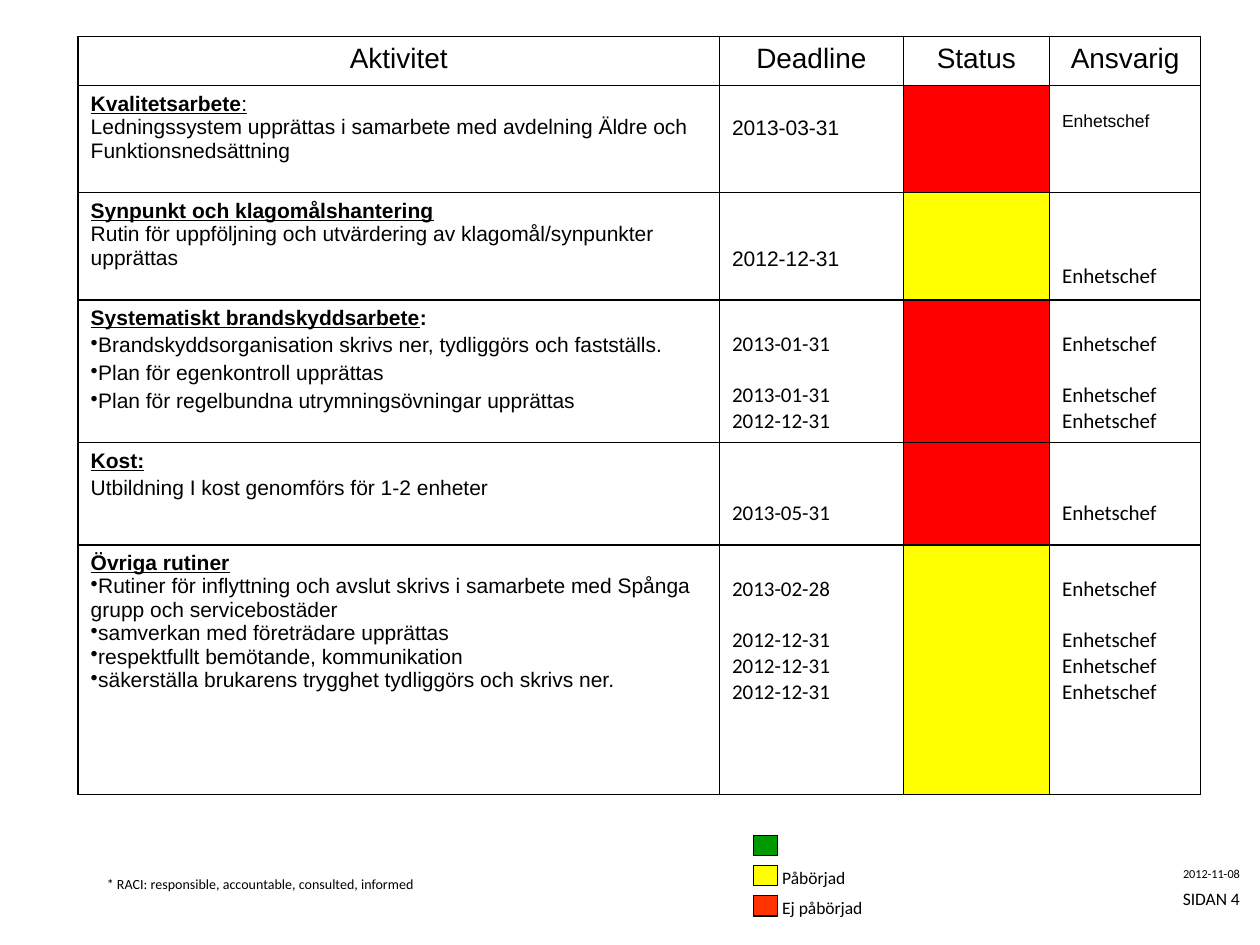
from dataclasses import dataclass

from lxml.etree import SubElement
from pptx import Presentation
from pptx.dml.color import RGBColor
from pptx.enum.shapes import MSO_SHAPE
from pptx.enum.text import MSO_ANCHOR, PP_ALIGN
from pptx.oxml.ns import qn
from pptx.util import Inches, Pt


@dataclass(frozen=True)
class Theme:
    black: str = "000000"
    white: str = "FFFFFF"
    red: str = "FF0000"
    yellow: str = "FFFF00"
    green: str = "009900"
    orange: str = "FF3300"
    heading_font: str = "Arial"
    detail_font: str = "Calibri"
    heading: int = 16
    body: int = 12
    small: int = 10
    note: int = 8
    stamp: int = 7


THEME = Theme()
ARIAL, CALIBRI = THEME.heading_font, THEME.detail_font
LINE_HEIGHT = {ARIAL: 1.15, CALIBRI: 1.22}
CELL_TOP = 3.6

HEADINGS = ["Aktivitet", "Deadline", "Status", "Ansvarig"]
COLUMN_SHARES = [50.9, 14.6, 11.6, 12]
HEADING_SHARE = 5.2
CHIEF = "Enhetschef"

ACTIVITIES = [
    dict(share=11.33, title="Kvalitetsarbete", tail=":", tail_bold=False, tail_underline=True,
         lines=["Ledningssystem upprättas i samarbete med avdelning Äldre och Funktionsnedsättning"],
         deadlines=[(1, "2013-03-31")], date_font=ARIAL, status=THEME.red,
         owners=[(1, CHIEF)], owner_font=ARIAL, owner_size=THEME.small),
    dict(share=11.33, title="Synpunkt och klagomålshantering",
         lines=["Rutin för uppföljning och utvärdering av klagomål/synpunkter upprättas"],
         deadlines=[(2, "2012-12-31")], date_font=ARIAL, status=THEME.yellow,
         owners=[(2.5, CHIEF)]),
    dict(share=15.13, title="Systematiskt brandskyddsarbete", tail=":", bullet=True, gap=2.4,
         lines=["Brandskyddsorganisation skrivs ner, tydliggörs och fastställs.",
                "Plan för egenkontroll upprättas",
                "Plan för regelbundna utrymningsövningar upprättas"],
         deadlines=[(1, "2013-01-31"), (1, "2013-01-31"), (0, "2012-12-31")],
         status=THEME.red, owners=[(1, CHIEF), (1, CHIEF), (0, CHIEF)]),
    dict(share=10.8, title="Kost:", gap=2.4,
         lines=["Utbildning I kost genomförs för 1-2 enheter"],
         deadlines=[(2, "2013-05-31")], status=THEME.red, owners=[(2, CHIEF)]),
    dict(share=26.4, title="Övriga rutiner", bullet=True,
         lines=["Rutiner för inflyttning och avslut skrivs i samarbete med Spånga grupp och servicebostäder",
                "samverkan med företrädare upprättas",
                "respektfullt bemötande, kommunikation",
                "säkerställa brukarens trygghet tydliggörs och skrivs ner."],
         deadlines=[(1, "2013-02-28"), (1, "2012-12-31"), (0, "2012-12-31"), (0, "2012-12-31")],
         status=THEME.yellow, owners=[(1, CHIEF), (1, CHIEF), (0, CHIEF), (0, CHIEF)]),
]

LEGEND = [(THEME.green, ""), (THEME.yellow, "Påbörjad"), (THEME.orange, "Ej påbörjad")]
FOOTNOTE = "* RACI: responsible, accountable, consulted, informed"
STAMPS = [("2012-11-08", THEME.stamp), ("SIDAN 4", THEME.small)]

deck = Presentation()
deck.slide_width, deck.slide_height = Inches(10), Inches(7.5)
slide = deck.slides.add_slide(deck.slide_layouts[6])


def across(share):
    return int(deck.slide_width * share / 100)


def down(share):
    return int(deck.slide_height * share / 100)


def area(left, top, width, height):
    return across(left), down(top), across(width), down(height)


def style(font, name, size):
    font.name, font.size = name, Pt(size)
    font.color.rgb = RGBColor.from_string(THEME.black)


def paint(target, color):
    target.fill.solid()
    target.fill.fore_color.rgb = RGBColor.from_string(color)


def outline(cell):
    properties = cell._tc.get_or_add_tcPr()
    for position, side in enumerate(("lnL", "lnR", "lnT", "lnB")):
        border = properties.makeelement(qn(f"a:{side}"), {"w": str(Pt(1))})
        fill = SubElement(border, qn("a:solidFill"))
        SubElement(fill, qn("a:srgbClr"), val=THEME.black)
        properties.insert(position, border)


def next_paragraph(frame, index):
    return frame.add_paragraph() if index else frame.paragraphs[0]


def write_activity(cell, activity):
    heading = cell.text_frame.paragraphs[0]
    style(heading.font, ARIAL, THEME.body)
    title = heading.add_run()
    title.text = activity["title"]
    title.font.bold = title.font.underline = True
    if "tail" in activity:
        tail = heading.add_run()
        tail.text = activity["tail"]
        tail.font.bold = activity.get("tail_bold", True)
        tail.font.underline = activity.get("tail_underline", False)
    for line in activity["lines"]:
        detail = cell.text_frame.add_paragraph()
        detail.text = line
        detail.space_before = Pt(activity.get("gap", 0))
        if activity.get("bullet"):
            properties = detail._p.get_or_add_pPr()
            properties.set("marL", "0")
            properties.set("indent", "0")
            SubElement(properties, qn("a:buChar"), char="•")
        style(detail.font, ARIAL, THEME.body)


def write_entries(cell, entries, font=CALIBRI, size=THEME.body):
    line = size * LINE_HEIGHT[font]
    for index, (skipped, text) in enumerate(entries):
        entry = next_paragraph(cell.text_frame, index)
        entry.text = text
        style(entry.font, font, size)
        if index:
            entry.space_before = Pt(skipped * line)
        else:
            cell.margin_top = Pt(CELL_TOP + skipped * line)


def add_label(text, place, size, wrap=True):
    frame = slide.shapes.add_textbox(*area(*place)).text_frame
    frame.word_wrap = wrap
    label = frame.paragraphs[0]
    label.text = text
    style(label.font, CALIBRI, size)
    return frame


row_shares = [HEADING_SHARE] + [activity["share"] for activity in ACTIVITIES]
plan = slide.shapes.add_table(
    len(row_shares), len(HEADINGS),
    *area(6.2, 3.87, sum(COLUMN_SHARES), sum(row_shares))).table
plan.first_row = plan.horz_banding = False
for column, share in zip(plan.columns, COLUMN_SHARES):
    column.width = across(share)
for row, share in zip(plan.rows, row_shares):
    row.height = down(share)
for cell in plan.iter_cells():
    paint(cell, THEME.white)
    outline(cell)

for cell, text in zip(plan.rows[0].cells, HEADINGS):
    heading = cell.text_frame.paragraphs[0]
    heading.text = text
    heading.alignment = PP_ALIGN.CENTER
    style(heading.font, ARIAL, THEME.heading)

for row, activity in zip(list(plan.rows)[1:], ACTIVITIES):
    task, deadline, status, owner = row.cells
    write_activity(task, activity)
    write_entries(deadline, activity["deadlines"], activity.get("date_font", CALIBRI))
    paint(status, activity["status"])
    write_entries(owner, activity["owners"], activity.get("owner_font", CALIBRI),
                  activity.get("owner_size", THEME.body))

add_label(FOOTNOTE, (7.5, 92, 59, 3.07), THEME.note)

for index, (color, meaning) in enumerate(LEGEND):
    top = 88.4 + index * 3.2
    swatch = slide.shapes.add_shape(MSO_SHAPE.RECTANGLE, *area(59.8, top, 1.9, 2.13))
    swatch.shadow.inherit = False
    paint(swatch, color)
    swatch.line.color.rgb = RGBColor.from_string(THEME.black)
    swatch.line.width = Pt(0.75)
    if meaning:
        add_label(meaning, (61.1, top - 0.53, 9, 3.6), THEME.small, wrap=False)

for index, (text, size) in enumerate(STAMPS):
    stamp = add_label(text, (88, 91.2 + index * 2.67, 10.4, 2.53), size)
    stamp.margin_left = stamp.margin_right = stamp.margin_top = stamp.margin_bottom = 0
    stamp.vertical_anchor = MSO_ANCHOR.MIDDLE
    stamp.paragraphs[0].alignment = PP_ALIGN.RIGHT

deck.save("out.pptx")
